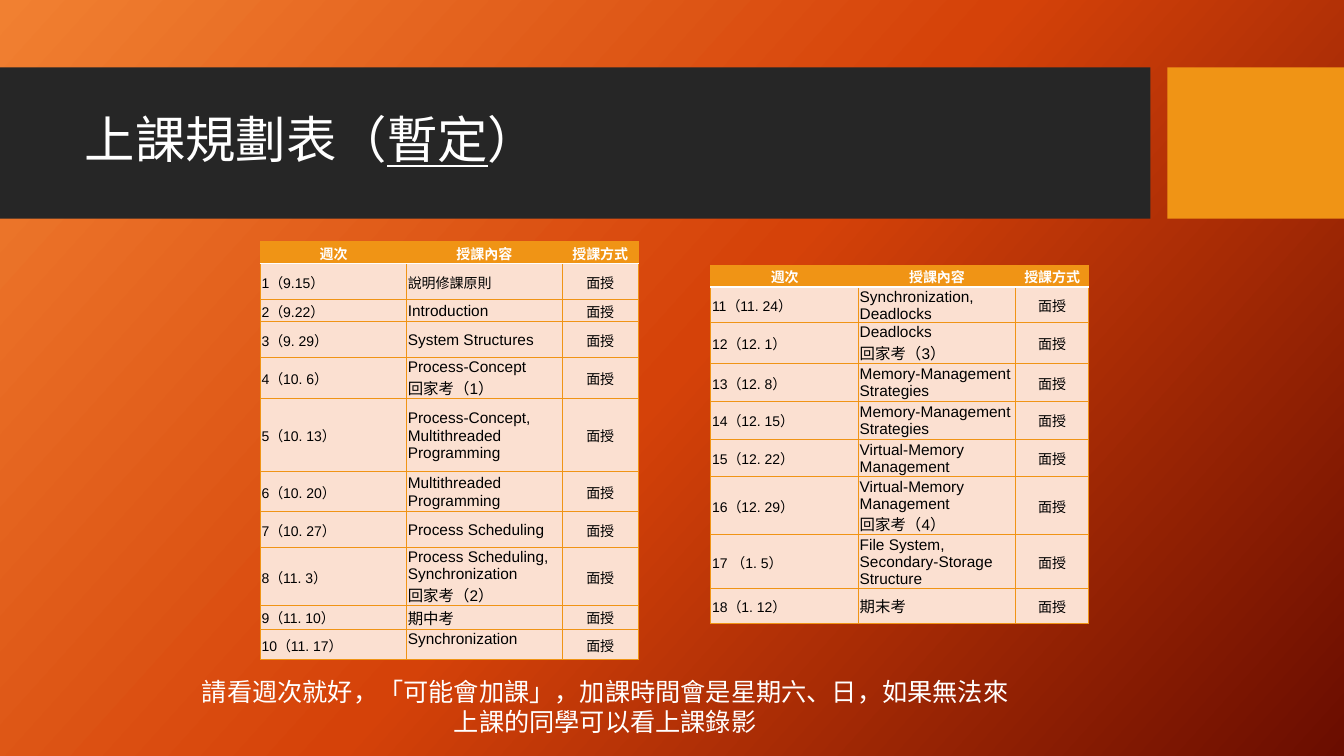
from copy import deepcopy

from pptx import Presentation
from pptx.dml.color import RGBColor
from pptx.enum.shapes import MSO_SHAPE as Shape
from pptx.enum.text import MSO_ANCHOR as Anchor, MSO_AUTO_SIZE as Fit, PP_ALIGN as Align
from pptx.oxml import parse_xml
from pptx.oxml.ns import nsdecls, qn
from pptx.util import Pt

WHITE = RGBColor(0xFF, 0xFF, 0xFF)
BLACK = RGBColor(0x00, 0x00, 0x00)
DARK = RGBColor(0x26, 0x26, 0x26)
GOLD = RGBColor(0xF0, 0x94, 0x15)
CREAM = RGBColor(0xFB, 0xE0, 0xD1)
GLOW = (
    (0, RGBColor(0xF1, 0x80, 0x31)),
    (0.5, RGBColor(0xD5, 0x42, 0x09)),
    (1, RGBColor(0x6A, 0x0D, 0x00)),
)

FACE = "Arial"
HAN = "Noto Sans CJK SC"
MODE = "面授"
HEADS = ("週次", "授課內容", "授課方式")

# Row height, week, content (one line per paragraph)
FALL = (
    (25.7, "1（9.15）", "說明修課原則"),
    (15.7, "2（9.22）", "Introduction"),
    (25.7, "3（9. 29）", "System Structures"),
    (29.3, "4（10. 6）", "Process-Concept\n回家考（1）"),
    (52.1, "5（10. 13）", "Process-Concept, Multithreaded Programming"),
    (28.6, "6（10. 20）", "Multithreaded Programming"),
    (25.7, "7（10. 27）", "Process Scheduling"),
    (41.4, "8（11. 3）", "Process Scheduling, Synchronization\n回家考（2）"),
    (16.8, "9（11. 10）", "期中考"),
    (22.1, "10（11. 17）", "Synchronization"),
)
WINTER = (
    (25.7, "11（11. 24）", "Synchronization, Deadlocks"),
    (28.8, "12（12. 1）", "Deadlocks\n回家考（3）"),
    (27, "13（12. 8）", "Memory-Management Strategies"),
    (27, "14（12. 15）", "Memory-Management Strategies"),
    (27, "15（12. 22）", "Virtual-Memory Management"),
    (41.4, "16（12. 29）", "Virtual-Memory Management\n回家考（4）"),
    (38, "17 （1. 5）", "File System, Secondary-Storage Structure"),
    (25, "18（1. 12）", "期末考"),
)


def put(item, **form):
    for name, value in form.items():
        setattr(item, name, value)


def style(font, color, **form):
    put(font, **{"name": FACE, **form})
    font.color.rgb = color


def paint(slide):
    """Fill the background with the three-stop gradient."""
    fill = slide.background.fill
    fill.gradient()
    fill.gradient_angle = 360 - 42
    stops = slide.element.find(".//" + qn("a:gsLst"))
    stops.insert(1, deepcopy(stops[0]))
    for stop, (place, color) in zip(fill.gradient_stops, GLOW):
        stop.position = place
        stop.color.rgb = color


def bar(slide, left, width, color):
    box = slide.shapes.add_shape(Shape.RECTANGLE, Pt(left), Pt(48.2), Pt(width), Pt(108))
    box.shadow.inherit = False
    box.fill.solid()
    box.fill.fore_color.rgb = color
    box.line.fill.background()


def title(slide):
    head = slide.shapes.title
    put(head, left=Pt(53.3), top=Pt(59), width=Pt(756.7), height=Pt(85))
    head.element.getparent().append(head.element)
    frame = head.text_frame
    put(frame, vertical_anchor=Anchor.MIDDLE, auto_size=Fit.NONE, word_wrap=True)
    line = frame.paragraphs[0]
    put(line, alignment=Align.LEFT, line_spacing=0.9)
    for text, face, under in (("上課規劃表（", FACE, False), ("暫定", HAN, True), ("）", FACE, False)):
        run = line.add_run()
        run.text = text
        style(run.font, WHITE, size=Pt(36), name=face, underline=under)


def edge(cell, **sides):
    """Draw cell borders; each side L, R, T, B takes (colour, points)."""
    props = cell._tc.get_or_add_tcPr()
    for spot, (side, (color, width)) in enumerate(sides.items()):
        props.insert(spot, parse_xml(
            f'<a:ln{side} {nsdecls("a")} w="{Pt(width)}"><a:solidFill>'
            f'<a:srgbClr val="{color}"/></a:solidFill></a:ln{side}>'))


def write(cell, text, align, color, fill, anchor=Anchor.MIDDLE, **form):
    put(cell, margin_left=Pt(0.8), margin_right=Pt(0.8), margin_top=Pt(0.8),
        margin_bottom=0, vertical_anchor=anchor)
    cell.fill.solid()
    cell.fill.fore_color.rgb = fill
    cell.text_frame.text = text
    for line in cell.text_frame.paragraphs:
        line.alignment = align
        for run in line.runs:
            style(run.font, color, **form)


def plan(slide, left, top, widths, first, weeks):
    """Add a timetable with a header of the given height."""
    tall = (first, *(week[0] for week in weeks))
    grid = slide.shapes.add_table(len(tall), 3, Pt(left), Pt(top),
                                  Pt(sum(widths)), Pt(sum(tall))).table
    grid.horz_banding = False
    for col, width in zip(grid.columns, widths):
        col.width = Pt(width)
    for row, height in zip(grid.rows, tall):
        row.height = Pt(height)
    thin, rule = (GOLD, 0.75), (WHITE, 1)
    for c, text in enumerate(HEADS):
        cell = grid.cell(0, c)
        write(cell, text, Align.CENTER, WHITE, GOLD, size=Pt(10), bold=True)
        edge(cell, L=thin, R=thin, T=thin, B=rule)
    for r, (_, week, topic) in enumerate(weeks, 1):
        small = topic == "說明修課原則"
        anchor = Anchor.TOP if week.startswith("10") else Anchor.MIDDLE
        cells = (
            (week, Align.LEFT, 10, Anchor.MIDDLE),
            (topic, Align.LEFT, 10 if small else 11, anchor),
            (MODE, Align.CENTER, 10, Anchor.MIDDLE),
        )
        for c, (text, align, size, hold) in enumerate(cells):
            cell = grid.cell(r, c)
            write(cell, text, align, BLACK, CREAM, hold, size=Pt(size), bold=False)
            edge(cell, L=thin, R=thin, T=rule if r == 1 else thin, B=thin)


def note(slide, text):
    box = slide.shapes.add_textbox(Pt(131), Pt(479.5), Pt(602.6), Pt(51))
    frame = box.text_frame
    put(frame, word_wrap=True, auto_size=Fit.SHAPE_TO_FIT_TEXT)
    line = frame.paragraphs[0]
    line.alignment = Align.CENTER
    run = line.add_run()
    run.text = text
    style(run.font, WHITE, size=Pt(18))


def main():
    deck = Presentation()
    put(deck, slide_width=Pt(960), slide_height=Pt(540))
    slide = deck.slides.add_slide(deck.slide_layouts[5])
    paint(slide)
    bar(slide, 0, 821.8, DARK)
    bar(slide, 833.8, 126.2, GOLD)
    title(slide)
    plan(slide, 186, 172.5, (104.5, 111, 54.5), 16, FALL)
    plan(slide, 507.8, 189.5, (105.5, 112, 52.5), 15.5, WINTER)
    note(slide, "請看週次就好，「可能會加課」，加課時間會是星期六、日，如果無法來上課的同學可以看上課錄影")
    deck.save("out.pptx")


if __name__ == "__main__":
    main()
